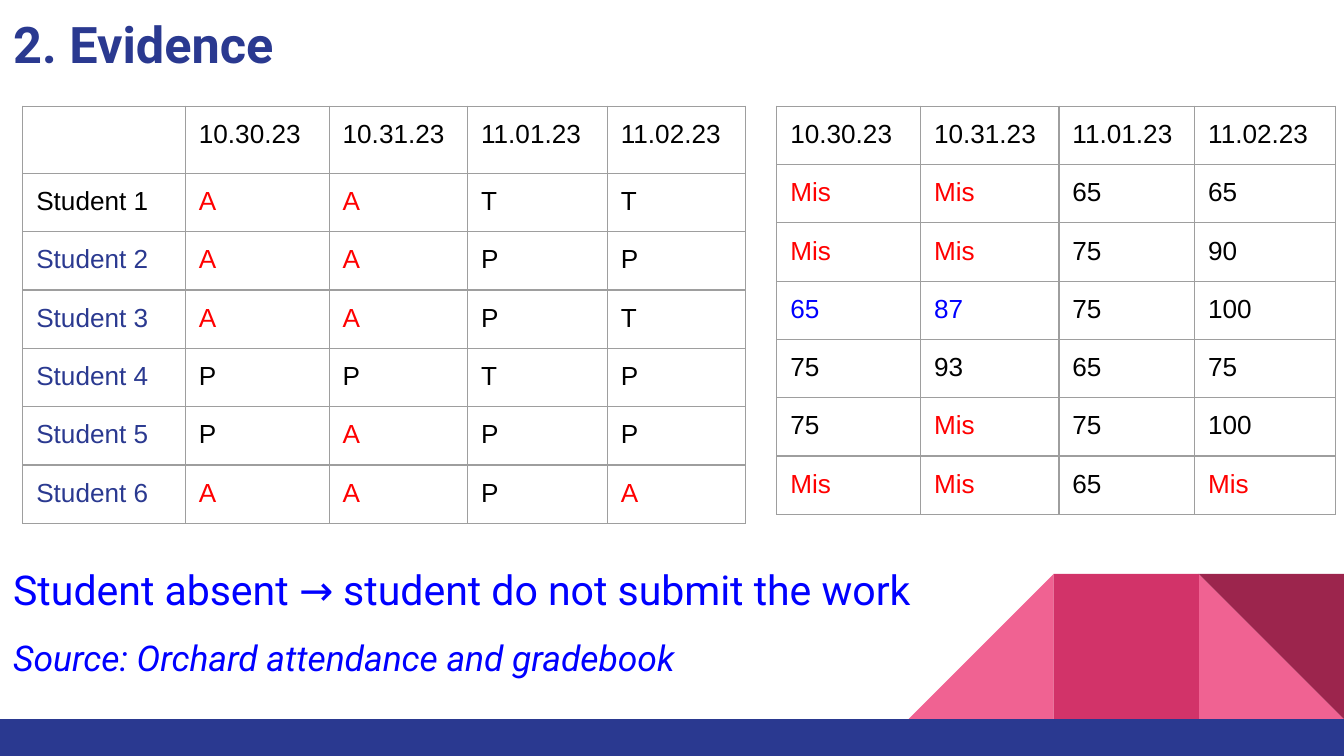
from lxml.etree import SubElement
from pptx import Presentation
from pptx.dml.color import RGBColor
from pptx.enum.shapes import MSO_SHAPE
from pptx.oxml.ns import qn
from pptx.util import Inches, Pt

NAVY = RGBColor(0x2A, 0x39, 0x90)
BLUE = RGBColor(0x00, 0x00, 0xFF)
RED = RGBColor(0xFF, 0x00, 0x00)
BLACK = RGBColor(0x00, 0x00, 0x00)
PINK = RGBColor(0xF0, 0x62, 0x92)
ROSE = RGBColor(0xD2, 0x33, 0x69)
WINE = RGBColor(0x9C, 0x25, 0x4D)
GREY = "9E9E9E"

DATES = ["10.30.23", "10.31.23", "11.01.23", "11.02.23"]
MARKS = ["AATT", "AAPP", "AAPT", "PPTP", "PAPP", "AAPA"]
ATTEND = [["", *DATES]] + [
    [f"Student {n}", *marks] for n, marks in enumerate(MARKS, 1)
]
GRADES = [
    DATES,
    ["Mis", "Mis", "65", "65"],
    ["Mis", "Mis", "75", "90"],
    ["65", "87", "75", "100"],
    ["75", "93", "65", "75"],
    ["75", "Mis", "75", "100"],
    ["Mis", "Mis", "65", "Mis"],
]


def add_block(slide, kind, box, color, turn=0):
    shape = slide.shapes.add_shape(kind, *map(Inches, box))
    shape.shadow.inherit = False
    shape.fill.solid()
    shape.fill.fore_color.rgb = color
    shape.line.fill.background()
    shape.rotation = turn


def add_decor(slide, left, top, side):
    """Row of square blocks standing on the footer band."""
    tri, rect = MSO_SHAPE.RIGHT_TRIANGLE, MSO_SHAPE.RECTANGLE
    blocks = [(2, tri, PINK, 0), (0, tri, PINK, 270),
              (1, rect, ROSE, 0), (2, tri, WINE, 180)]
    for col, kind, color, turn in blocks:
        add_block(slide, kind, (left + col * side, top, side, side), color, turn)
    add_block(slide, rect, (0, top + side, 10, 0.28), NAVY)


def add_text(slide, box, lines, color):
    """Each line is (text, size, bold, italic)."""
    frame = slide.shapes.add_textbox(*map(Inches, box)).text_frame
    frame.word_wrap = True
    frame.margin_left = frame.margin_right = Inches(0.1)
    frame.margin_top = frame.margin_bottom = Inches(0.1)
    frame.text = "\n".join(line[0] for line in lines)
    for para, (_, size, bold, italic) in zip(frame.paragraphs, lines):
        font = para.runs[0].font
        font.name, font.size = "Roboto", Pt(size)
        font.bold, font.italic = bold, italic
        font.color.rgb = color
    for para in frame.paragraphs[1:]:
        para.space_before = para.space_after = Pt(12)


def add_border(cell):
    props = cell._tc.get_or_add_tcPr()
    for side in ("a:lnL", "a:lnR", "a:lnT", "a:lnB"):
        line = SubElement(props, qn(side), w=str(Pt(0.75)))
        fill = SubElement(line, qn("a:solidFill"))
        SubElement(fill, qn("a:srgbClr"), val=GREY)


def fill_cell(cell, text, color):
    add_border(cell)
    cell.fill.background()
    cell.margin_left = cell.margin_right = Inches(0.1)
    cell.margin_top = cell.margin_bottom = Inches(0.1)
    if text:
        cell.text_frame.text = text
        font = cell.text_frame.paragraphs[0].runs[0].font
        font.name, font.size = "Arial", Pt(14)
        font.color.rgb = color


def add_grid(slide, left, top, side, widths, data, tints):
    """Table whose cells are black unless tints names a colour for (row, col)."""
    frame = slide.shapes.add_table(
        len(data), len(widths), Inches(left), Inches(top),
        Inches(side), Inches(side))
    table = frame.table
    table.first_row = table.horz_banding = False
    for col, width in zip(table.columns, widths):
        col.width = Inches(width)
    for r, values in enumerate(data):
        # Rows grow to fit their text
        table.rows[r].height = Inches(0.4)
        for c, text in enumerate(values):
            base = RED if text in ("A", "Mis") else BLACK
            fill_cell(table.cell(r, c), text, tints.get((r, c), base))
    frame.width = frame.height = Inches(side)


def main():
    deck = Presentation()
    deck.slide_width = Inches(10)
    deck.slide_height = deck.slide_width * 9 // 16
    slide = deck.slides.add_slide(deck.slide_layouts[6])

    add_decor(slide, 6.76, 4.27, 1.08)

    # Title and finding
    add_text(slide, (0, 0, 9.32, 0.63), [("2. Evidence", 27, True, False)], NAVY)
    add_text(slide, (0, 4.1, 9.32, 1.28), [
        ("Student absent → student do not submit the work", 22, False, False),
        ("Source: Orchard attendance and gradebook", 19, False, True),
    ], BLUE)

    # Attendance, then grades for the same dates
    names = {(row, 0): NAVY for row in range(2, 7)}
    add_grid(slide, 0.17, 0.79, 3.28, [1.21, 1.07, 1.03, 1.04, 1.03], ATTEND, names)
    add_grid(slide, 5.78, 0.79, 3.28, [1.07, 1.03, 1.01, 1.05], GRADES,
             {(3, 0): BLUE, (3, 1): BLUE})

    deck.save("out.pptx")


if __name__ == "__main__":
    main()
